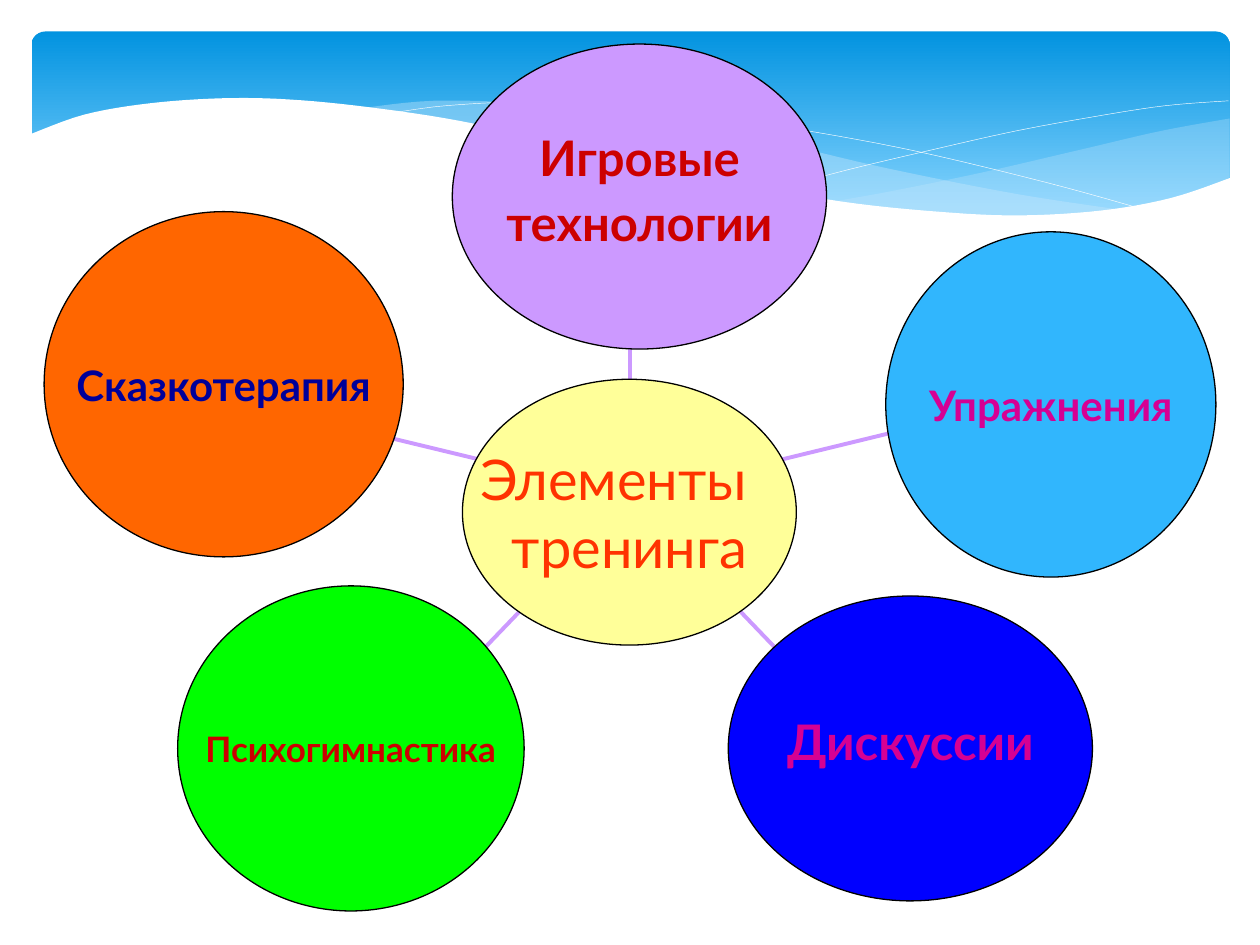
from pptx import Presentation
from pptx.dml.color import RGBColor
from pptx.enum.shapes import MSO_CONNECTOR, MSO_SHAPE
from pptx.enum.text import MSO_ANCHOR, PP_ALIGN
from pptx.oxml.ns import qn
from pptx.util import Inches, Pt
from lxml import etree

STRAIGHT = MSO_CONNECTOR.STRAIGHT
ELLIPSE = MSO_SHAPE.OVAL
ROUNDED = MSO_SHAPE.ROUNDED_RECTANGLE
MIDDLE = MSO_ANCHOR.MIDDLE
CENTER, RIGHT = PP_ALIGN.CENTER, PP_ALIGN.RIGHT

FONT = "Lato"
LILAC = "CC99FF"
WAVE = "C6E7FC"
WHITE = "FFFFFF"

# left, top, width, height, fill, lines, text size, text colour, tight spacing
TOPICS = [
    (3.59, 0.35, 2.97, 2.42, LILAC, ["Игровые", "технологии"], 28, "CC0000", True),
    (7.03, 1.84, 2.62, 2.74, "31B6FD", ["Упражнения"], 24, "D60093", False),
    (5.78, 4.73, 2.89, 2.42, "0000FF", ["Дискуссии"], 28, "D60093", True),
    (1.41, 4.65, 2.75, 2.58, "00FF00", ["Психогимнастика"], 20, "CC0000", False),
    (0.35, 1.68, 2.85, 2.74, "FF6600", ["Сказкотерапия"], 24, "000099", False),
]
SPOKES = [
    ((5, 3.04), (5, 2.12)),
    ((6.15, 3.66), (7.3, 3.38)),
    ((5.71, 4.68), (6.42, 5.42)),
    ((4.29, 4.68), (3.58, 5.42)),
    ((3.86, 3.66), (2.7, 3.38)),
]

RIGHT_WAVE = [
    [(9.76, 0.94), (9.21, 1.04), (8.61, 1.18), (7.79, 1.37), (7.06, 1.52), (6.61, 1.6)],
    [(6.61, 1.6), (7.19, 1.67), (7.81, 1.72), (8.35, 1.72), (8.89, 1.66),
     (9.35, 1.56), (9.76, 1.41)],
]
LONG_WAVE = [
    [(8.93, 1.67), (8.07, 1.54), (7.06, 1.34), (6.29, 1.16), (5.55, 1),
     (4.89, 0.89), (4.2, 0.82), (3.44, 0.8), (2.86, 0.86)],
    [(2.86, 0.86), (3.62, 0.97), (4.49, 1.16), (5.3, 1.35), (6.18, 1.53),
     (6.95, 1.65), (7.61, 1.71), (8.28, 1.73), (8.93, 1.67)],
]
FALLING_LINE = [(3.09, 0.9), (3.53, 0.84), (4.16, 0.81), (4.89, 0.84), (5.56, 0.91),
                (6.36, 1.03), (7.27, 1.2), (8.31, 1.45), (9.07, 1.66)]
RISING_LINE = [(6.13, 1.51), (6.72, 1.35), (7.48, 1.17), (8.06, 1.04), (8.66, 0.93),
               (9.24, 0.84), (9.75, 0.8)]
WHITE_EDGE = [(9.77, 1.41), (9.3, 1.57), (8.75, 1.67), (8.09, 1.71), (7.44, 1.68),
              (6.68, 1.6), (5.79, 1.44), (5.03, 1.28), (4.47, 1.14), (3.65, 0.96),
              (2.92, 0.85), (2.3, 0.79), (1.77, 0.78), (1.19, 0.82), (0.67, 0.91),
              (0.23, 1.07)]


def color(hex_string):
    return RGBColor.from_string(hex_string)


def smooth(points, steps=6):
    """Sample a Catmull-Rom curve that passes through the points."""
    padded = [points[0], *points, points[-1]]
    samples = [points[0]]
    for a, b, c, d in zip(padded, padded[1:], padded[2:], padded[3:]):
        for step in range(1, steps + 1):
            t = step / steps
            samples.append(tuple(
                (2 * q + (r - p) * t + (2 * p - 5 * q + 4 * r - s) * t ** 2
                 + (3 * q - p - 3 * r + s) * t ** 3) / 2
                for p, q, r, s in zip(a, b, c, d)))
    return samples


def add_outline(slide, points, closed):
    start, *rest = [(Inches(x), Inches(y)) for x, y in points]
    builder = slide.shapes.build_freeform(*start)
    builder.add_line_segments(rest, close=closed)
    shape = builder.convert_to_shape()
    shape.shadow.inherit = False
    return shape


def add_area(slide, points, fill, alpha=100):
    area = add_outline(slide, points, True)
    area.fill.solid()
    area.fill.fore_color.rgb = color(fill)
    area.line.fill.background()
    if alpha < 100:
        tone = area.fill._xPr.find(".//" + qn("a:srgbClr"))
        etree.SubElement(tone, qn("a:alpha")).set("val", str(alpha * 1000))


def add_curve(slide, points):
    curve = add_outline(slide, smooth(points), False)
    curve.fill.background()
    curve.line.color.rgb = color(WHITE)
    curve.line.width = Pt(0.25)


def add_banner(slide):
    banner = slide.shapes.add_shape(
        ROUNDED, Inches(0.25), Inches(0.25), Inches(9.51), Inches(1.56))
    banner.adjustments[0] = 0.07
    banner.shadow.inherit = False
    banner.line.fill.background()
    banner.fill.gradient()
    banner.fill.gradient_angle = 270
    stops = zip(banner.fill.gradient_stops, (0, 0.9), ("0293E0", "83D3FE"))
    for stop, position, tone in stops:
        stop.position = position
        stop.color.rgb = color(tone)

    for edges, alpha in ((RIGHT_WAVE, 29), (LONG_WAVE, 40)):
        outline = [point for edge in edges for point in smooth(edge)]
        add_area(slide, outline, WAVE, alpha)
    add_curve(slide, FALLING_LINE)
    add_curve(slide, RISING_LINE)
    add_area(slide, smooth(WHITE_EDGE) + [(0.23, 2.24), (9.77, 2.24)], WHITE)


def add_spoke(slide, start, end):
    spoke = slide.shapes.add_connector(
        STRAIGHT, *(Inches(value) for value in (*start, *end)))
    spoke.line.color.rgb = color(LILAC)
    spoke.line.width = Pt(2.25)
    etree.SubElement(spoke._element.spPr, qn("a:effectLst"))


def add_circle(slide, left, top, width, height, fill, lines, size, text_color,
               tight=False, bold=True, align=CENTER):
    circle = slide.shapes.add_shape(
        ELLIPSE, Inches(left), Inches(top), Inches(width), Inches(height))
    circle.shadow.inherit = False
    circle.fill.solid()
    circle.fill.fore_color.rgb = color(fill)
    circle.line.color.rgb = color("000000")
    circle.line.width = Pt(0.75)

    frame = circle.text_frame
    frame.word_wrap = False
    frame.vertical_anchor = MIDDLE
    frame.margin_left = frame.margin_right = 0
    frame.margin_top = frame.margin_bottom = 0
    for index, line in enumerate(lines):
        para = frame.add_paragraph() if index else frame.paragraphs[0]
        para.alignment = align
        if tight:
            para.line_spacing = 0.7
            para.space_before = Pt(size / 2)
        span = para.add_run()
        span.text = line
        span.font.name = FONT
        span.font.size = Pt(size)
        span.font.bold = bold
        span.font.color.rgb = color(text_color)


def main():
    deck = Presentation()
    deck.slide_width, deck.slide_height = Inches(10), Inches(7.5)
    slide = deck.slides.add_slide(deck.slide_layouts[6])
    add_banner(slide)
    for (start, end), topic in zip(SPOKES, TOPICS):
        add_spoke(slide, start, end)
        add_circle(slide, *topic)
    add_circle(slide, 3.67, 3.01, 2.65, 2.11, "FFFF99", ["Элементы", "тренинга"],
               32, "FF3300", bold=False, align=RIGHT)
    deck.save("out.pptx")


if __name__ == "__main__":
    main()
